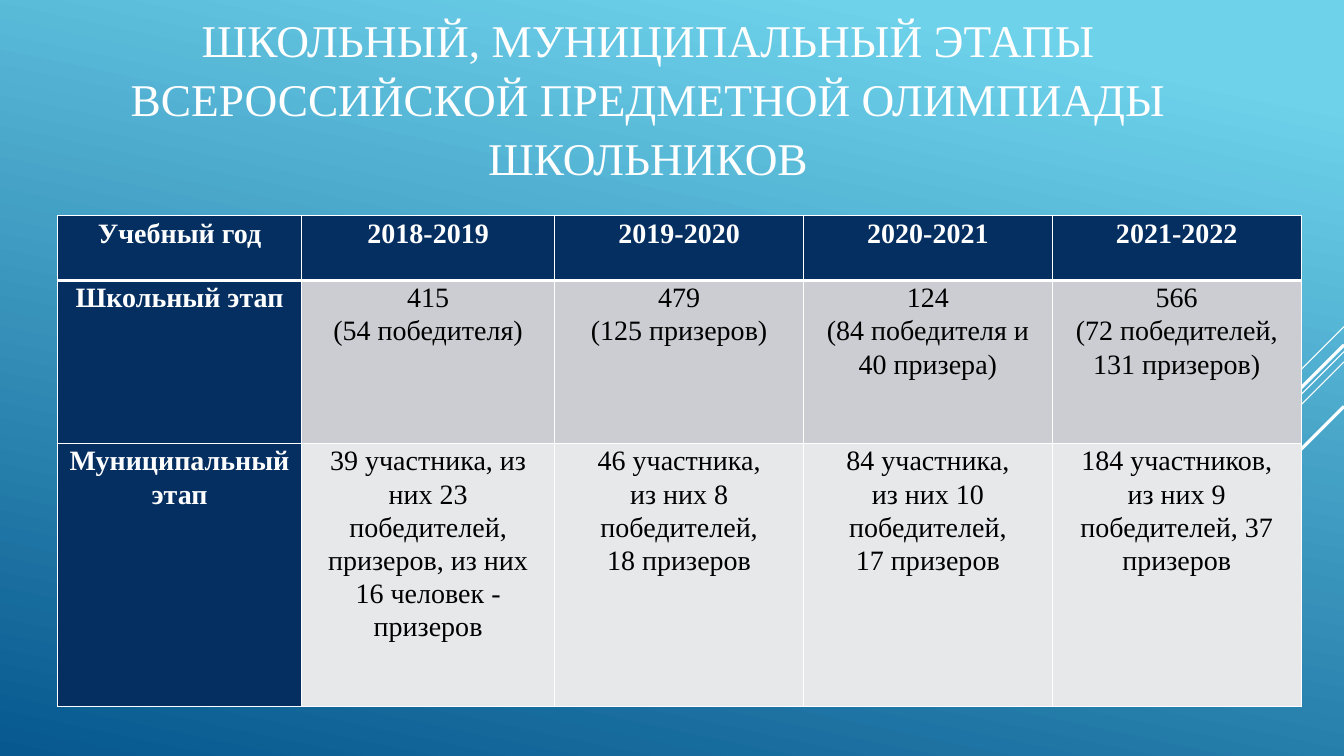
from lxml import etree
from pptx import Presentation
from pptx.dml.color import RGBColor
from pptx.enum import shapes, text
from pptx.oxml import ns
from pptx.util import Cm, Pt

TITLE = "ШКОЛЬНЫЙ, МУНИЦИПАЛЬНЫЙ ЭТАПЫ ВСЕРОССИЙСКОЙ ПРЕДМЕТНОЙ ОЛИМПИАДЫ ШКОЛЬНИКОВ"
ROWS = [
    ["Учебный год", "2018-2019", "2019-2020", "2020-2021", "2021-2022"],
    ["Школьный этап", "415\n(54 победителя)", "479\n(125 призеров)",
     "124\n(84 победителя и 40 призера)", "566\n(72 победителей, 131 призеров)"],
    ["Муниципальный этап",
     "39 участника, из них 23 победителей, призеров, из них\n16 человек - призеров",
     "46 участника,\nиз них 8 победителей,\n18 призеров",
     "84 участника,\nиз них 10 победителей,\n17 призеров",
     "184 участников,\nиз них 9 победителей, 37 призеров"],
]
COLUMN_WIDTHS = [6.15, 6.38, 6.27, 6.27, 6.27]
ROW_HEIGHTS = [1.63, 4.11, 6.63]
DIAGONALS = [(8.23, 2.54, 0.75), (8.86, 8.28, 0.75), (9.12, 5.27, 0.75),
             (8.69, 4.85, 2.25), (10.24, 3.53, 2.25)]
COLORS = {"sky": "6ED2EB", "deep": "06588E", "white": "FFFFFF", "black": "000000",
          "navy": "052F61", "band1": "CCCDD2", "band2": "E7E8EA"}
FONT = "Times New Roman"
WIDTH, HEIGHT = 33.87, 19.05


def color(name):
    return RGBColor.from_string(COLORS[name])


def format_text(frame, size, color_name, bold, spacing):
    for paragraph in frame.paragraphs:
        paragraph.alignment = text.PP_ALIGN.CENTER
        paragraph.line_spacing = spacing
        for run in paragraph.runs:
            run.font.name = FONT
            run.font.size = Pt(size)
            run.font.bold = bold
            run.font.color.rgb = color(color_name)


def add_border(cell, side, points):
    properties = cell._tc.get_or_add_tcPr()
    line = etree.SubElement(properties, ns.qn(f"a:ln{side}"), w=str(Pt(points)))
    fill = etree.SubElement(line, ns.qn("a:solidFill"))
    etree.SubElement(fill, ns.qn("a:srgbClr"), val=COLORS["white"])


def add_background(slide):
    fill = slide.background.fill
    fill.gradient()
    fill.gradient_angle = 258
    for stop, name, position in zip(fill.gradient_stops, ("sky", "deep"), (0.1, 1)):
        stop.color.rgb = color(name)
        stop.position = position


def add_diagonals(slide):
    for top, reach, weight in DIAGONALS:
        line = slide.shapes.add_connector(
            shapes.MSO_CONNECTOR.STRAIGHT,
            Cm(WIDTH), Cm(top), Cm(WIDTH - reach), Cm(top + reach))
        line.line.color.rgb = color("white")
        line.line.width = Pt(weight)
        etree.SubElement(line._element.spPr, ns.qn("a:effectLst"))


def add_title(slide):
    frame = slide.shapes.add_textbox(Cm(0.94), Cm(0.33), Cm(30.78), Cm(4.19)).text_frame
    frame.word_wrap = True
    frame.vertical_anchor = text.MSO_ANCHOR.MIDDLE
    frame.text = TITLE
    format_text(frame, 32.4, "white", False, 1.08)


def add_results(slide):
    table = slide.shapes.add_table(
        len(ROWS), len(COLUMN_WIDTHS), Cm(1.45), Cm(5.44),
        Cm(sum(COLUMN_WIDTHS)), Cm(sum(ROW_HEIGHTS))).table
    for column, width in zip(table.columns, COLUMN_WIDTHS):
        column.width = Cm(width)
    for row, height in zip(table.rows, ROW_HEIGHTS):
        row.height = Cm(height)
    for r, values in enumerate(ROWS):
        for c, value in enumerate(values):
            cell = table.cell(r, c)
            heading = r == 0 or c == 0
            cell.margin_left = cell.margin_right = Cm(0.18)
            cell.margin_top = cell.margin_bottom = 0
            cell.text_frame.text = value
            format_text(cell.text_frame, 20, "white" if heading else "black", heading, 1.07)
            weights = {"L": 1, "R": 1, "T": 3 if r == 1 else 1, "B": 3 if r == 0 else 1}
            for side, points in weights.items():
                add_border(cell, side, points)
            cell.fill.solid()
            cell.fill.fore_color.rgb = color("navy" if heading else f"band{r}")


def main():
    presentation = Presentation()
    presentation.slide_width, presentation.slide_height = Cm(WIDTH), Cm(HEIGHT)
    slide = presentation.slides.add_slide(presentation.slide_layouts[6])
    add_background(slide)
    add_diagonals(slide)
    add_title(slide)
    add_results(slide)
    presentation.save("out.pptx")


if __name__ == "__main__":
    main()
